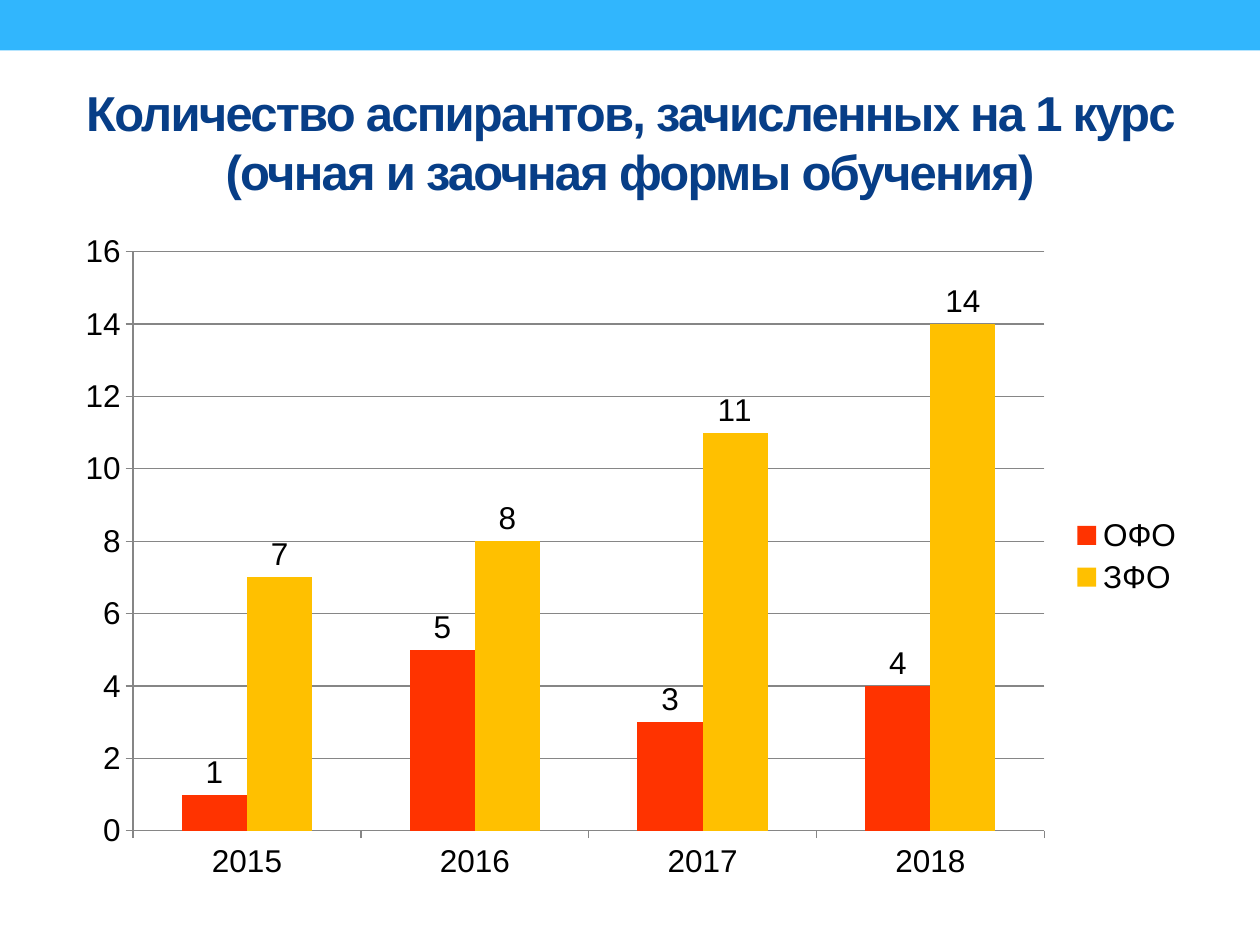
from dataclasses import dataclass
from typing import Any

from pptx import Presentation
from pptx.chart.data import CategoryChartData
from pptx.dml.color import RGBColor
from pptx.enum.chart import XL_CHART_TYPE, XL_LABEL_POSITION, XL_LEGEND_POSITION, XL_TICK_MARK
from pptx.enum.shapes import MSO_SHAPE
from pptx.enum.text import MSO_ANCHOR, PP_ALIGN
from pptx.util import Inches, Pt

COLUMNS = XL_CHART_TYPE.COLUMN_CLUSTERED
ABOVE_BAR = XL_LABEL_POSITION.OUTSIDE_END
LEGEND_RIGHT = XL_LEGEND_POSITION.RIGHT
TICK_OUT = XL_TICK_MARK.OUTSIDE
TICK_NONE = XL_TICK_MARK.NONE
RECTANGLE = MSO_SHAPE.RECTANGLE
MIDDLE = MSO_ANCHOR.MIDDLE
CENTER = PP_ALIGN.CENTER

SKY = RGBColor(0x31, 0xB6, 0xFD)
NAVY = RGBColor(0x07, 0x3E, 0x87)
BLACK = RGBColor(0, 0, 0)
GRAY = RGBColor(0x86, 0x86, 0x86)
RED = RGBColor(0xFF, 0x33, 0x00)
AMBER = RGBColor(0xFF, 0xC0, 0x00)

TITLE = "Количество аспирантов, зачисленных на 1 курс (очная и заочная формы обучения)"
TITLE_FONT = {"name": "Arial", "size": Pt(28), "bold": True}
CHART_FONT = {"name": "Arial", "size": Pt(18), "bold": False}
YEARS = ("2015", "2016", "2017", "2018")


@dataclass(frozen=True)
class StudyForm:
    name: str
    enrolled: tuple[int, ...]
    color: RGBColor


STUDY_FORMS = (
    StudyForm("ОФО", (1, 5, 3, 4), RED),
    StudyForm("ЗФО", (7, 8, 11, 14), AMBER),
)


def apply_format(target: Any, values: dict[str, Any]) -> None:
    for name, value in values.items():
        setattr(target, name, value)


def add_band(slide: Any) -> None:
    band = slide.shapes.add_shape(RECTANGLE, Inches(0), Inches(0), Inches(10), Inches(0.4))
    band.shadow.inherit = False
    band.fill.solid()
    band.fill.fore_color.rgb = SKY
    band.line.fill.background()


def add_title(slide: Any) -> None:
    box = slide.shapes.add_textbox(Inches(0.5), Inches(0.58), Inches(9), Inches(1.08))
    apply_format(box.text_frame, {"word_wrap": True, "vertical_anchor": MIDDLE})
    para = box.text_frame.paragraphs[0]
    para.alignment = CENTER
    span = para.add_run()
    span.text = TITLE
    apply_format(span.font, TITLE_FONT)
    span.font.color.rgb = NAVY
    span._r.get_or_add_rPr().set("spc", "-100")


def style_axis(axis: Any) -> None:
    apply_format(axis, {"major_tick_mark": TICK_OUT, "minor_tick_mark": TICK_NONE})
    axis.format.line.color.rgb = GRAY
    axis.format.line.width = Pt(0.75)


def style_series(series: Any, form: StudyForm) -> None:
    series.invert_if_negative = False
    series.format.fill.solid()
    series.format.fill.fore_color.rgb = form.color
    apply_format(series.data_labels, {"show_value": True, "position": ABOVE_BAR})


def add_enrollment_chart(slide: Any) -> None:
    data = CategoryChartData()
    data.categories = YEARS
    for form in STUDY_FORMS:
        data.add_series(form.name, form.enrolled)
    frame = slide.shapes.add_chart(
        COLUMNS, Inches(0.5), Inches(1.75), Inches(9), Inches(5.33), data
    )
    chart = frame.chart
    apply_format(chart, {"has_title": False, "has_legend": True})
    apply_format(chart.font, CHART_FONT)
    chart.font.color.rgb = BLACK
    apply_format(chart.legend, {"position": LEGEND_RIGHT, "include_in_layout": False})

    style_axis(chart.category_axis)
    style_axis(chart.value_axis)
    scale = {
        "minimum_scale": 0,
        "maximum_scale": 16,
        "major_unit": 2,
        "has_major_gridlines": True,
    }
    apply_format(chart.value_axis, scale)
    grid = chart.value_axis.major_gridlines.format.line
    grid.color.rgb = GRAY
    grid.width = Pt(0.75)

    plot = chart.plots[0]
    apply_format(plot, {"gap_width": 150, "overlap": 0, "vary_by_categories": False})
    for series, form in zip(plot.series, STUDY_FORMS):
        style_series(series, form)


def main() -> None:
    deck = Presentation()
    deck.slide_width = Inches(10)
    deck.slide_height = Inches(7.5)
    slide = deck.slides.add_slide(deck.slide_layouts[6])
    add_band(slide)
    add_title(slide)
    add_enrollment_chart(slide)
    deck.save("out.pptx")


if __name__ == "__main__":
    main()
